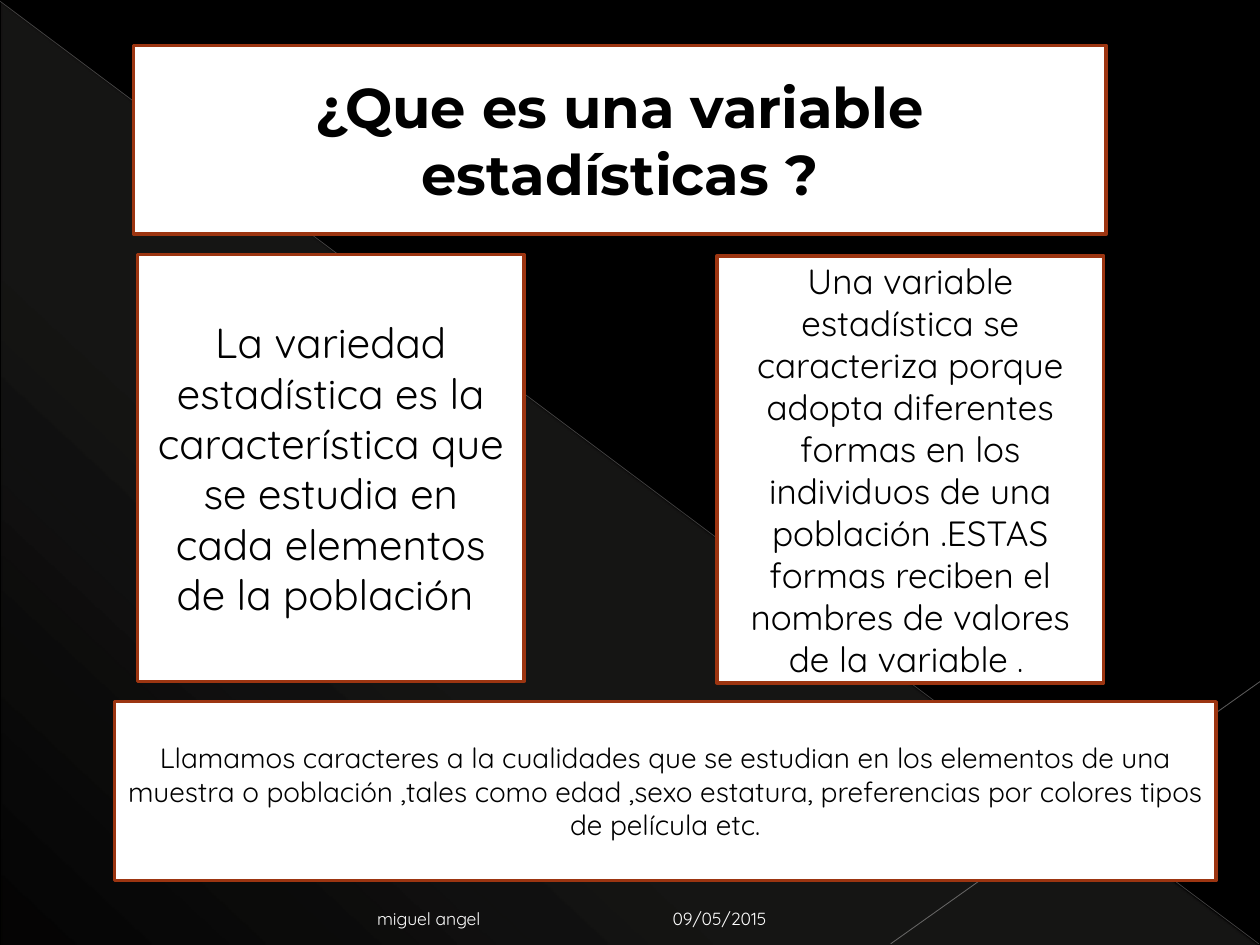
from lxml import etree
from pptx import Presentation
from pptx.dml.color import RGBColor
from pptx.enum.shapes import MSO_CONNECTOR as Connector, MSO_SHAPE as Shape
from pptx.enum.text import MSO_ANCHOR as Anchor, PP_ALIGN as Align
from pptx.oxml import parse_xml
from pptx.oxml.ns import nsdecls, qn
from pptx.util import Pt

COLORS = {
    "background": "000000", "panel": "FFFFFF", "border": "9C3511",
    "ink": "000000", "footer": "FFFFFF", "glow": "E9E5DC",
    "long line": "C1BEBE", "short line": "C7C5C5",
}


def color(name):
    return RGBColor.from_string(COLORS[name])


def write(box, runs, font, ink, align, anchor, bold=False):
    """Fill the box with one paragraph of (text, size) runs."""
    frame = box.text_frame
    frame.word_wrap = True
    frame.vertical_anchor = anchor
    para = frame.paragraphs[0]
    para.alignment = align
    for text, size in runs:
        span = para.add_run()
        span.text = text
        span.font.name = font
        span.font.size = Pt(size)
        span.font.bold = bold
        span.font.color.rgb = color(ink)


deck = Presentation()
deck.slide_width, deck.slide_height = Pt(720), Pt(540)
page = deck.slides.add_slide(deck.slide_layouts[6])
page.background.fill.solid()
page.background.fill.fore_color.rgb = color("background")

# Faint triangle that fades towards the lower left corner
triangle = page.shapes.add_shape(Shape.RIGHT_TRIANGLE, Pt(0.7), Pt(1.4), Pt(718.6), Pt(538.6))
triangle.shadow.inherit = False
triangle.line.fill.background()
triangle.fill.background()
stops = "".join(
    f'<a:gs pos="{place * 1000}"><a:srgbClr val="{COLORS["glow"]}">'
    f'<a:alpha val="{opacity * 1000}"/></a:srgbClr></a:gs>'
    for place, opacity in [(0, 10), (70, 8), (100, 1)]
)
gradient = parse_xml(
    f'<a:gradFill {nsdecls("a")} rotWithShape="1"><a:gsLst>{stops}</a:gsLst>'
    f'<a:lin ang="{133 * 60000}" scaled="0"/></a:gradFill>'
)
properties = triangle._element.spPr
properties.replace(properties.find(qn("a:noFill")), gradient)

# Thin diagonal lines
for name, ends, width, opacity in [
    ("long line", (0, 0.7, 719.3, 539.3), 0.39, 35),
    ("short line", (720, 389.5, 509, 539.3), 0.47, 45),
]:
    diagonal = page.shapes.add_connector(Connector.STRAIGHT, *[Pt(end) for end in ends])
    diagonal.line.width = Pt(width)
    diagonal.line.color.rgb = color(name)
    properties = diagonal._element.spPr
    tint = properties.find(".//" + qn("a:srgbClr"))
    etree.SubElement(tint, qn("a:alpha")).set("val", str(opacity * 1000))
    etree.SubElement(properties, qn("a:effectLst"))

# Bordered panels: place, font, bold, runs
panels = [
    ((76.3, 25.9, 555.8, 108), "Montserrat", True,
     [("¿Que es una variable estadísticas ?", 32)]),
    ((78.5, 145.4, 221, 244), "Quicksand", False,
     [("La variedad estadística es la característica que se estudia en cada "
       "elementos de la población ", 24)]),
    ((409.7, 146.2, 221, 244), "Quicksand", False,
     [("Una variable estadística se caracteriza porque adopta diferentes formas en los "
       "individuos de una población .ESTAS formas reciben el nombres de valores "
       "de la variable ", 20), (". ", 18)]),
    ((65.5, 401, 629.3, 102.2), "Quicksand", False,
     [("Llamamos caracteres a la cualidades que se estudian en los elementos de una "
       "muestra o población ,tales como edad ,sexo estatura, preferencias por colores "
       "tipos de película etc.", 16)]),
]
for place, font, bold, runs in panels:
    panel = page.shapes.add_shape(Shape.RECTANGLE, *[Pt(length) for length in place])
    panel.shadow.inherit = False
    panel.fill.solid()
    panel.fill.fore_color.rgb = color("panel")
    panel.line.color.rgb = color("border")
    panel.line.width = Pt(2)
    write(panel, runs, font, "ink", Align.CENTER, Anchor.MIDDLE, bold)

# Footer: date and author
for text, left, width, align, right_margin in [
    ("09/05/2015", 377.3, 167.8, Align.LEFT, 7.2),
    ("miguel angel", 36, 335.5, Align.RIGHT, 97),
]:
    footer = page.shapes.add_textbox(Pt(left), Pt(510.5), Pt(width), Pt(23.8))
    footer.text_frame.margin_right = Pt(right_margin)
    write(footer, [(text, 10)], "Quicksand", "footer", align, Anchor.BOTTOM)

deck.save("out.pptx")
